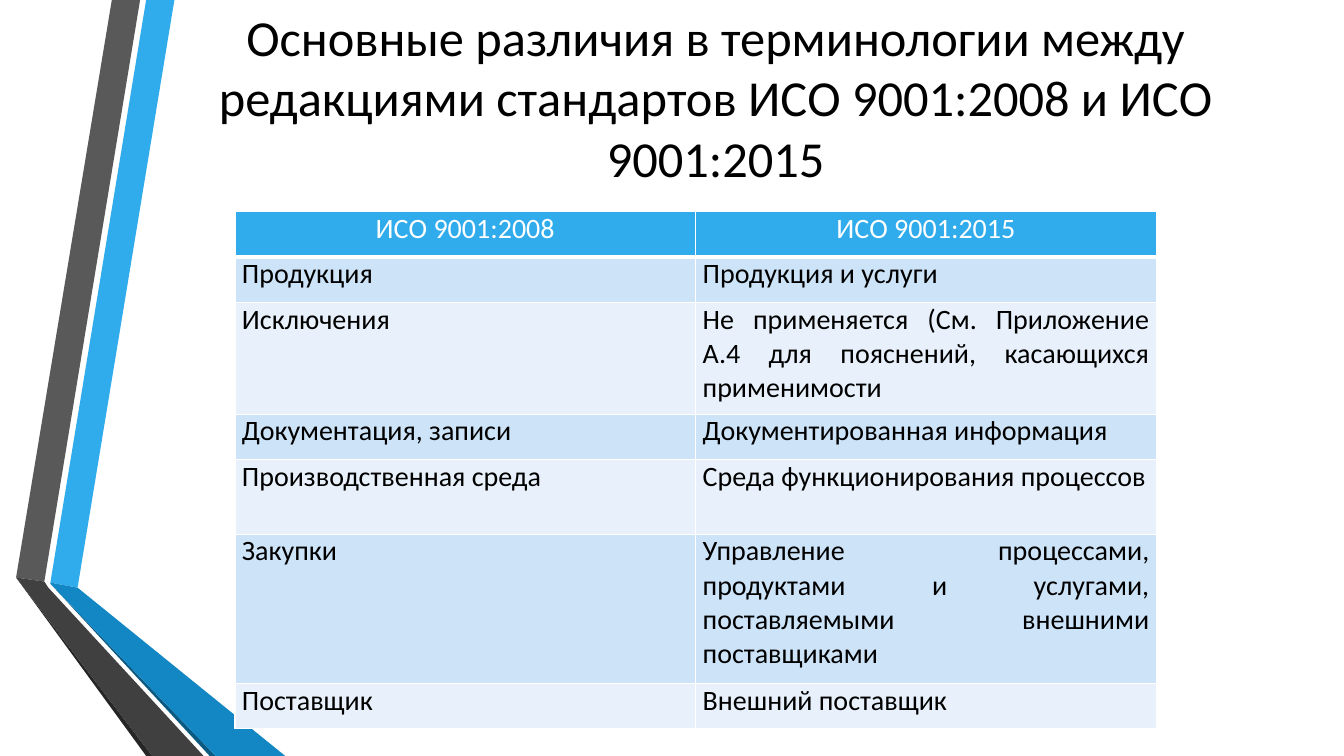
"""Build a slide comparing the terms of two editions of ISO 9001."""
from dataclasses import dataclass

from lxml.etree import SubElement
from pptx import Presentation
from pptx.dml.color import RGBColor
from pptx.enum.text import MSO_ANCHOR, MSO_AUTO_SIZE, PP_ALIGN
from pptx.oxml.ns import qn
from pptx.slide import Slide
from pptx.table import _Cell
from pptx.text.text import _Paragraph
from pptx.util import Emu, Pt

PX = 9144


@dataclass(frozen=True)
class Theme:
    font: str = "Calibri"
    title_size: int = 36
    table_size: int = 20
    text: str = "000000"
    white: str = "FFFFFF"
    header: str = "30ACEC"
    odd_row: str = "CDE3F8"
    even_row: str = "E8F1FB"
    blue_shade: str = "1287C3"
    blue_edge: str = "0C5A82"
    gray: str = "595959"
    gray_shade: str = "404040"
    gray_edge: str = "262626"


@dataclass(frozen=True)
class Ribbon:
    color: str
    points: tuple[tuple[int, int], ...]


@dataclass(frozen=True)
class TermRow:
    height: int
    old: str
    new: str


THEME = Theme()
TITLE = "Основные различия в терминологии между редакциями стандартов ИСО 9001:2008 и ИСО 9001:2015"

RIBBONS = (
    Ribbon(THEME.header, ((50, 578), (77, 583), (173, 0), (145, 0))),
    Ribbon(THEME.gray, ((139, 0), (111, 0), (16, 573), (44, 577))),
    Ribbon(THEME.gray_edge, ((16, 573), (145, 750), (151, 750))),
    Ribbon(THEME.blue_edge, ((50, 579), (208, 750), (214, 750))),
    Ribbon(THEME.blue_shade, ((50, 579), (214, 750), (283, 750), (77, 583), (50, 578))),
    Ribbon(THEME.gray_shade, ((202, 750), (48, 583), (44, 577), (16, 573), (151, 750))),
)

TERMS = (
    TermRow(45, "ИСО 9001:2008", "ИСО 9001:2015"),
    TermRow(45, "Продукция", "Продукция и услуги"),
    TermRow(111, "Исключения", "Не применяется (См. Приложение А.4 для пояснений, касающихся применимости"),
    TermRow(45, "Документация, записи", "Документированная информация"),
    TermRow(74, "Производственная среда", "Среда функционирования процессов"),
    TermRow(148, "Закупки", "Управление процессами, продуктами и услугами, поставляемыми внешними поставщиками"),
    TermRow(45, "Поставщик", "Внешний поставщик"),
)


def px(length: int) -> Emu:
    """Convert whole px into EMU."""
    return Emu(length * PX)


def format_text(paragraph: _Paragraph, size: int, color: str, alignment: PP_ALIGN) -> None:
    """Format a paragraph and its runs."""
    paragraph.alignment = alignment
    for run in paragraph.runs:
        run.font.name = THEME.font
        run.font.size = Pt(size)
        run.font.bold = False
        run.font.color.rgb = RGBColor.from_string(color)


def draw_ribbon(slide: Slide, ribbon: Ribbon) -> None:
    """Draw one filled band of the side decoration."""
    builder = slide.shapes.build_freeform(*ribbon.points[0], scale=PX)
    builder.add_line_segments(ribbon.points[1:], close=True)
    shape = builder.convert_to_shape()
    shape.shadow.inherit = False
    shape.fill.solid()
    shape.fill.fore_color.rgb = RGBColor.from_string(ribbon.color)
    shape.line.fill.background()


def set_title(slide: Slide) -> None:
    """Place and format the title placeholder."""
    title = slide.shapes.title
    title.left, title.top, title.width, title.height = px(162), px(0), px(1096), px(192)
    text_frame = title.text_frame
    text_frame.text = TITLE
    text_frame.word_wrap = True
    text_frame.auto_size = MSO_AUTO_SIZE.NONE
    text_frame.vertical_anchor = MSO_ANCHOR.MIDDLE
    format_text(text_frame.paragraphs[0], THEME.title_size, THEME.text, PP_ALIGN.CENTER)


def set_borders(cell: _Cell, bottom_width: int) -> None:
    """Give a cell white borders."""
    properties = cell._tc.get_or_add_tcPr()
    widths = {"a:lnL": 1, "a:lnR": 1, "a:lnT": 1, "a:lnB": bottom_width}
    for position, (tag, width) in enumerate(widths.items()):
        border = SubElement(properties, qn(tag), w=str(Pt(width)))
        fill = SubElement(border, qn("a:solidFill"))
        SubElement(fill, qn("a:srgbClr"), val=THEME.white)
        properties.insert(position, border)


def fill_cell(cell: _Cell, text: str, row_index: int) -> None:
    """Write and format one table cell."""
    is_header = row_index == 0
    band = THEME.odd_row if row_index % 2 else THEME.even_row
    cell.text_frame.text = text
    cell.margin_left = cell.margin_right = px(7)
    cell.margin_top = cell.margin_bottom = 0
    cell.fill.solid()
    cell.fill.fore_color.rgb = RGBColor.from_string(THEME.header if is_header else band)
    set_borders(cell, 3 if is_header else 1)
    format_text(
        cell.text_frame.paragraphs[0],
        THEME.table_size,
        THEME.white if is_header else THEME.text,
        PP_ALIGN.CENTER if is_header else PP_ALIGN.JUSTIFY,
    )


def add_terms_table(slide: Slide) -> None:
    """Add the two-column table of terms."""
    height = sum(term.height for term in TERMS)
    frame = slide.shapes.add_table(len(TERMS), 2, px(233), px(210), px(914), px(height))
    for row_index, term in enumerate(TERMS):
        row = frame.table.rows[row_index]
        row.height = px(term.height)
        for cell, text in zip(row.cells, (term.old, term.new)):
            fill_cell(cell, text, row_index)


def main() -> None:
    """Build and save the presentation."""
    presentation = Presentation()
    presentation.slide_width, presentation.slide_height = px(1333), px(750)
    slide = presentation.slides.add_slide(presentation.slide_layouts[5])
    for ribbon in RIBBONS:
        draw_ribbon(slide, ribbon)
    set_title(slide)
    add_terms_table(slide)
    presentation.save("out.pptx")


if __name__ == "__main__":
    main()
